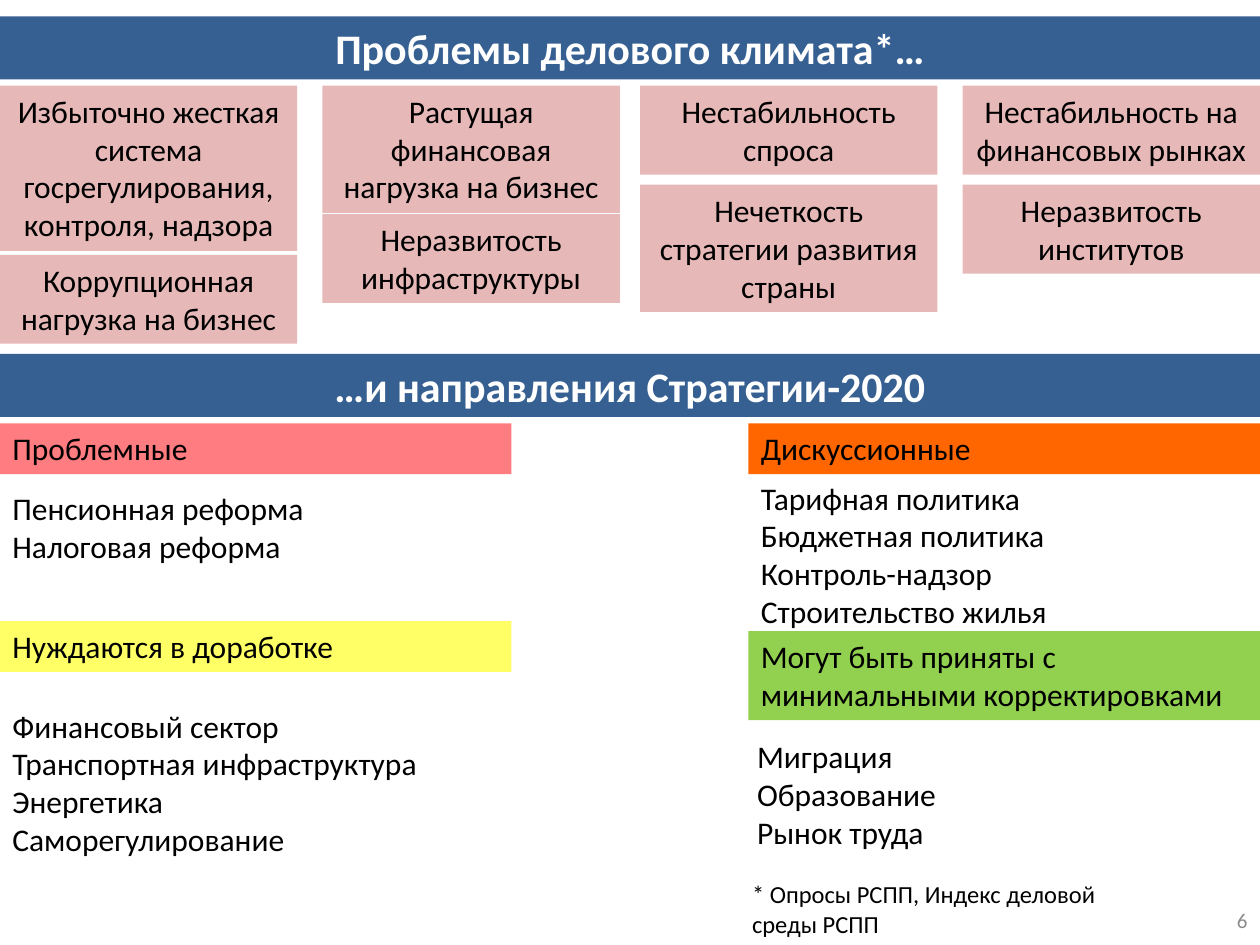
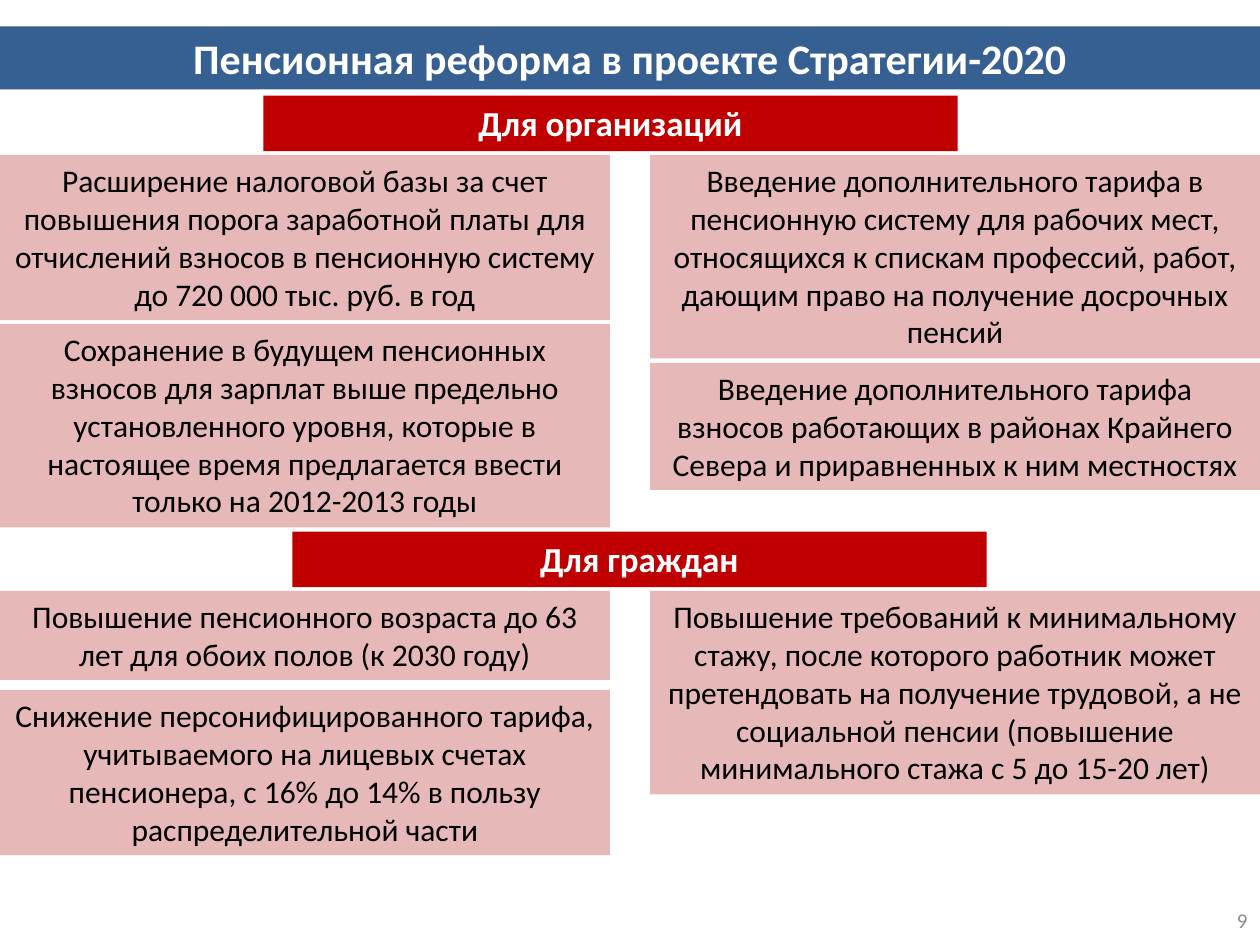
from pptx import Presentation
from pptx.dml.color import RGBColor
from pptx.enum.shapes import MSO_SHAPE
from pptx.enum.text import MSO_ANCHOR, MSO_AUTO_SIZE, PP_ALIGN
from pptx.util import Inches, Pt

RECT = MSO_SHAPE.RECTANGLE
TOP, MIDDLE = MSO_ANCHOR.TOP, MSO_ANCHOR.MIDDLE
GROW, FIXED = MSO_AUTO_SIZE.SHAPE_TO_FIT_TEXT, MSO_AUTO_SIZE.NONE
LEFT, CENTER, RIGHT = PP_ALIGN.LEFT, PP_ALIGN.CENTER, PP_ALIGN.RIGHT

# The slide is a grid of 100 columns by 75 rows of square cells.
COLS, ROWS = 100, 75
CELL = Inches(0.1)
LINE, PAD = 3.03, 1  # rows for a line of body text, and for both insets
HALF = 48.4
SIDE = 40.6
QUARTER = 23.6
FONT = "Calibri"
HUE = {
    "blue": "376092", "pink": "E6B9B8", "red": "C00000",
    "coral": "FF7C80", "orange": "FF6600", "yellow": "FFFF66",
    "green": "92D050", "white": "FFFFFF", "black": "000000",
    "gray": "8C8C8C",
}


def rgb(name):
    return RGBColor.from_string(HUE[name])


def tall(lines):
    """Rows taken by a box with this many lines of body text."""
    return PAD + LINE * lines


def write(shape, text, size=18, color="black", bold=False, align=LEFT,
          anchor=TOP, fit=GROW, wrap=True):
    frame = shape.text_frame
    frame.word_wrap = wrap
    frame.auto_size = fit
    frame.vertical_anchor = anchor
    frame.text = text
    for para in frame.paragraphs:
        para.alignment = align
        font = para.font
        font.name, font.size, font.bold = FONT, Pt(size), bold
        font.color.rgb = rgb(color)


def place(col, row, wide, high):
    return [round(n * CELL) for n in (col, row, wide, high)]


def box(slide, at, fill, text, **style):
    shape = slide.shapes.add_shape(RECT, *place(*at))
    shape.shadow.inherit = False
    shape.fill.solid()
    shape.fill.fore_color.rgb = rgb(fill)
    shape.line.fill.background()
    write(shape, text, **style)


def note(slide, at, text, **style):
    write(slide.shapes.add_textbox(*place(*at)), text, **style)


def title(slide, row, text):
    box(slide, (0, row, COLS, 5), "blue", text,
        size=24, color="white", bold=True, align=CENTER)


def header(slide, col, row, text):
    box(slide, (col, row, 55.1, 4.4), "red", text,
        size=20, color="white", bold=True, align=CENTER)


def stack(slide, col, row, wide, gap, items):
    """Pink boxes one under another; each item is (lines, text)."""
    for lines, text in items:
        high = tall(lines)
        box(slide, (col, row, wide, high), "pink", text, align=CENTER)
        row += high + gap


def group(slide, col, row, fill, lines, text):
    box(slide, (col, row, SIDE, tall(lines)), fill, text)


def listing(slide, col, row, wide, items):
    note(slide, (col, row, wide, tall(len(items))), "\n".join(items),
         wrap=False)


def number(slide, text):
    note(slide, (76.7, 71, 23.3, 4), text, size=12, color="gray",
         align=RIGHT, anchor=MIDDLE, fit=FIXED)


def climate(slide):
    title(slide, 1.3, "Проблемы делового климата*…")
    issues = [
        (0, 0.3, [
            (4, "Избыточно жесткая система госрегулирования, "
                "контроля, надзора"),
            (2, "Коррупционная нагрузка на бизнес")]),
        (25.6, 0.1, [
            (3, "Растущая финансовая нагрузка на бизнес"),
            (2, "Неразвитость инфраструктуры")]),
        (50.8, 0.8, [
            (2, "Нестабильность спроса"),
            (3, "Нечеткость стратегии развития страны")]),
        (COLS - QUARTER, 0.8, [
            (2, "Нестабильность на финансовых рынках"),
            (2, "Неразвитость институтов")]),
    ]
    for col, gap, items in issues:
        stack(slide, col, 6.8, QUARTER, gap, items)

    title(slide, 28.1, "…и направления Стратегии-2020")
    right = COLS - SIDE
    group(slide, 0, 33.6, "coral", 1, "Проблемные")
    group(slide, right, 33.6, "orange", 1, "Дискуссионные")
    group(slide, 0, 49.3, "yellow", 1, "Нуждаются в доработке")
    group(slide, right, 50.1, "green", 2,
          "Могут быть приняты с минимальными корректировками")
    listing(slide, 0, 38.3, 25.2, ["Пенсионная реформа", "Налоговая реформа"])
    listing(slide, right, 37.5, SIDE, [
        "Тарифная политика", "Бюджетная политика", "Контроль-надзор",
        "Строительство жилья"])
    listing(slide, 0, 55.6, 35, [
        "Финансовый сектор", "Транспортная инфраструктура", "Энергетика",
        "Саморегулирование"])
    listing(slide, 59.1, 58, 40.9, ["Миграция", "Образование", "Рынок труда"])
    note(slide, (58.7, 69.3, 33.9, 5.7),
         "* Опросы РСПП, Индекс деловой среды РСПП", size=14)
    number(slide, "6")


def pension(slide):
    title(slide, 2.1, "Пенсионная реформа в проекте Стратегии-2020")
    right = COLS - HALF
    header(slide, 20.9, 7.6, "Для организаций")
    stack(slide, 0, 12.3, HALF, 0.3, [
        (4, "Расширение налоговой базы за счет повышения порога заработной "
            "платы для отчислений взносов в пенсионную систему "
            "до 720 000 тыс. руб. в год"),
        (5, "Сохранение в будущем пенсионных взносов для зарплат выше "
            "предельно установленного уровня, которые в настоящее время "
            "предлагается ввести только на 2012-2013 годы")])
    stack(slide, right, 12.3, HALF, 0.35, [
        (5, "Введение дополнительного тарифа в пенсионную систему для "
            "рабочих мест, относящихся к спискам профессий, работ, дающим "
            "право на получение досрочных пенсий"),
        (3, "Введение дополнительного тарифа взносов работающих в районах "
            "Крайнего Севера и приравненных к ним местностях")])
    header(slide, 23.2, 42.2, "Для граждан")
    stack(slide, 0, 46.9, HALF, 0.8, [
        (2, "Повышение пенсионного возраста до 63 лет для обоих полов "
            "(к 2030 году)"),
        (4, "Снижение персонифицированного тарифа, учитываемого на лицевых "
            "счетах пенсионера, с 16% до 14% в пользу распределительной "
            "части")])
    stack(slide, right, 46.9, HALF, 0, [
        (5, "Повышение требований к минимальному стажу, после которого "
            "работник может претендовать на получение трудовой, а не "
            "социальной пенсии (повышение минимального стажа "
            "с 5 до 15-20 лет)")])
    number(slide, "9")


def main():
    deck = Presentation()
    deck.slide_width, deck.slide_height = COLS * CELL, ROWS * CELL
    blank = deck.slide_layouts[6]
    for build in (climate, pension):
        build(deck.slides.add_slide(blank))
    deck.save("out.pptx")


if __name__ == "__main__":
    main()
